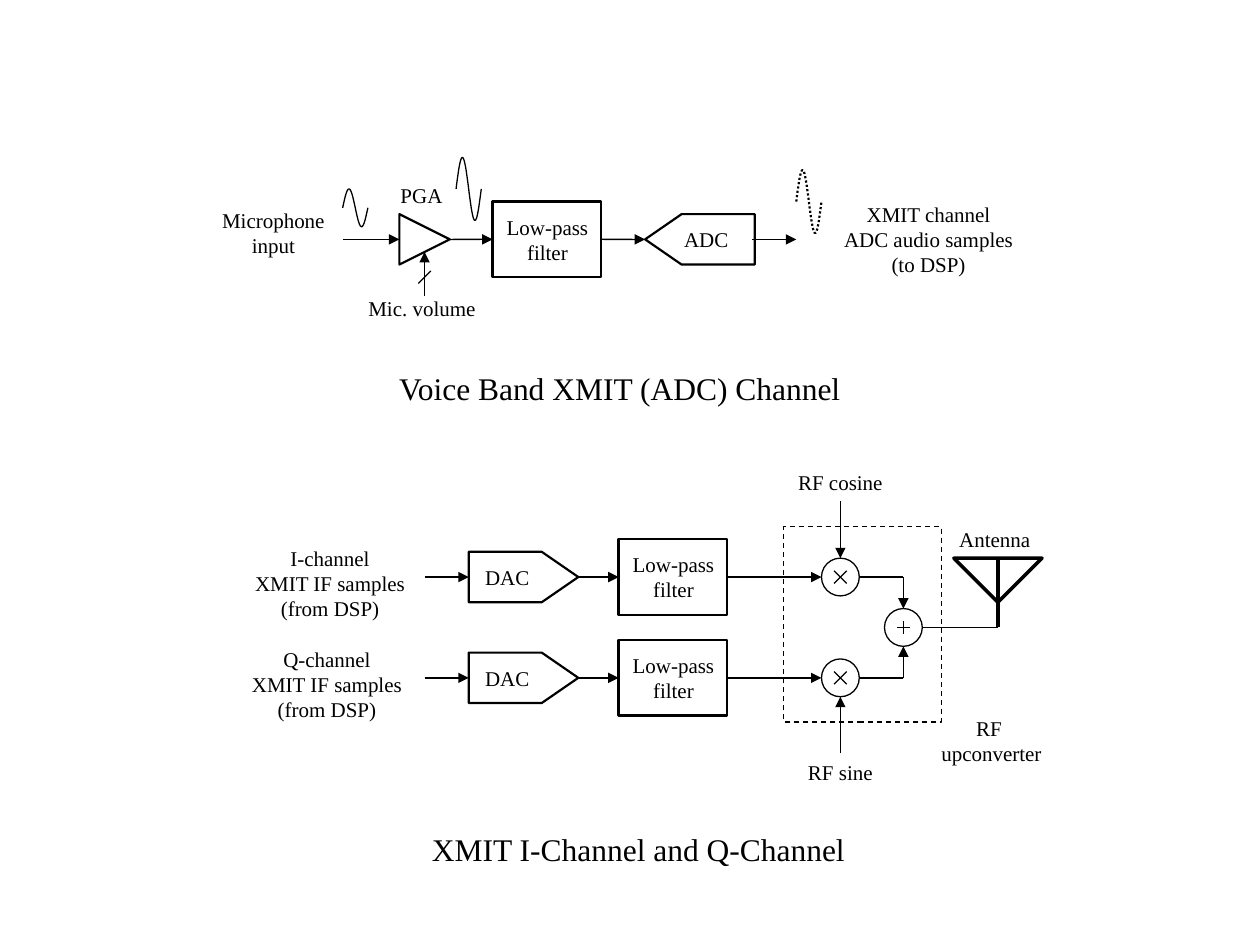
import math

import pptx
import pptx.dml.color
import pptx.enum.dml
import pptx.enum.shapes
import pptx.enum.text
import pptx.oxml
import pptx.oxml.ns
import pptx.util

Inches, Pt = pptx.util.Inches, pptx.util.Pt
SHAPE = pptx.enum.shapes.MSO_SHAPE
DASH = pptx.enum.dml.MSO_LINE
ALIGN = pptx.enum.text.PP_ALIGN

THEME = {
    "ink": pptx.dml.color.RGBColor(0, 0, 0),
    "paper": pptx.dml.color.RGBColor(255, 255, 255),
    "font": "Times New Roman",
    "title": Pt(18), "label": Pt(12),
    "thin": Pt(0.75), "medium": Pt(1.25), "heavy": Pt(2),
}

# Content: text with left, top, width, height in inches
TITLES = [
    ("XMIT I-Channel and Q-Channel", 3.33, 6.54, 3.49, 0.4),
    ("Voice Band XMIT (ADC) Channel", 3.07, 2.88, 3.74, 0.4),
]
LABELS = [
    ("Microphone\ninput", 1.47, 1.6, 1.4, 0.55),
    ("XMIT channel\nADC audio samples\n(to DSP)", 6.47, 1.55, 1.8, 0.9),
    ("Mic. volume ", 2.77, 2.3, 1.2, 0.35),
    ("PGA", 2.87, 1.4, 0.95, 0.3),
    ("I-channel\nXMIT IF samples\n(from DSP)", 1.77, 4.28, 1.7, 0.75),
    ("Q-channel\nXMIT IF samples\n(from DSP)", 1.72, 5.08, 1.75, 0.8),
    ("RF cosine", 6.17, 3.68, 1, 0.35),
    ("RF sine", 6.17, 5.98, 1, 0.4),
    ("RF \nupconverter", 7.22, 5.63, 1.3, 0.6),
    ("Antenna", 7.27, 4.13, 1.25, 0.4),
]
# Sine waves: left, middle, amplitude, line width, dash
WAVES = [
    (2.72, 1.65, 0.15, "thin", None),
    (3.62, 1.5, 0.25, "thin", None),
    (6.32, 1.6, 0.25, "medium", DASH.ROUND_DOT),
]
VOICE_Y = 1.9
CHANNEL_YS = (4.58, 5.38)
MIXER_X, ADDER_X, ANTENNA_X = 6.67, 7.17, 7.92
ADDER_Y = sum(CHANNEL_YS) / 2
RADIUS = 0.15
CONVERTER_W, CONVERTER_H, SHOULDER = 0.87, 0.4, 0.58

prs = pptx.Presentation()
prs.slide_width, prs.slide_height = Inches(10), Inches(7.5)
s = prs.slides.add_slide(prs.slide_layouts[6])


def set_all(obj, values):
    for name, value in values.items():
        setattr(obj, name, value)


def outline(sp, weight, dash=None, filled=False):
    sp.line.color.rgb = THEME["ink"]
    set_all(sp.line, {"width": THEME[weight], "dash_style": dash})
    sp.shadow.inherit = False
    if filled:
        sp.fill.solid()
        sp.fill.fore_color.rgb = THEME["paper"]
    else:
        sp.fill.background()
    return sp


def preset(kind, x, y, w, h, weight, dash=None, filled=False):
    sp = s.shapes.add_shape(kind, *map(Inches, (x, y, w, h)))
    return outline(sp, weight, dash, filled)


def freeform(points, weight, dash=None, filled=False, close=True):
    pts = [(Inches(x), Inches(y)) for x, y in points]
    fb = s.shapes.build_freeform(*pts[0])
    fb.add_line_segments(pts[1:], close=close)
    return outline(fb.convert_to_shape(), weight, dash, filled)


def line(x1, y1, x2, y2, arrow=False, weight="thin", begin=None, end=None):
    c = s.shapes.add_connector(pptx.enum.shapes.MSO_CONNECTOR.STRAIGHT,
                               *map(Inches, (x1, y1, x2, y2)))
    if begin:
        c.begin_connect(begin, 3)
    if end:
        c.end_connect(end, 1)
    c.line.color.rgb = THEME["ink"]
    c.line.width = THEME[weight]
    ns = pptx.oxml.ns.nsdecls("a")
    if arrow:
        c.line._get_or_add_ln().append(
            pptx.oxml.parse_xml(f'<a:tailEnd {ns} type="triangle"/>'))
    c._element.spPr.append(pptx.oxml.parse_xml(f"<a:effectLst {ns}/>"))


def text(words, x, y, w, h, size="label", align=ALIGN.CENTER, wrap=True):
    tf = s.shapes.add_textbox(*map(Inches, (x, y, w, h))).text_frame
    tf.word_wrap = wrap
    for i, row in enumerate(words.split("\n")):
        p = tf.paragraphs[0] if i == 0 else tf.add_paragraph()
        p.alignment = align
        r = p.add_run()
        r.text = row
        set_all(r.font, {"name": THEME["font"], "size": THEME[size]})
        r.font.color.rgb = THEME["ink"]


def low_pass(x, y):
    """Filter box centred on height y."""
    box = preset(SHAPE.RECTANGLE, x, y - 0.3, 0.86, 0.6, "medium")
    text("Low-pass\nfilter", x - 0.09, y - 0.25, 1.05, 0.55)
    return box


def converter(name, x, y, point_left, text_x):
    """Five-sided converter whose tip points left or right."""
    outline_x = [0, SHOULDER, CONVERTER_W, SHOULDER, 0]
    if point_left:
        outline_x = [CONVERTER_W - dx for dx in outline_x]
    half = CONVERTER_H / 2
    freeform([(x + dx, y + dy) for dx, dy
              in zip(outline_x, (-half, -half, 0, half, half))], "medium", filled=True)
    text(name, text_x, y - 0.15, 0.81, 0.3)


def circle(x, y):
    preset(SHAPE.OVAL, x - RADIUS, y - RADIUS, 2 * RADIUS, 2 * RADIUS, "thin")


# Titles and labels
for title in TITLES:
    text(*title, size="title", align=ALIGN.LEFT, wrap=False)
for label in LABELS:
    text(*label)

# Voice band: amplifier, filter, converter
freeform([(3.17, VOICE_Y - 0.2), (3.57, VOICE_Y), (3.17, VOICE_Y + 0.2)], "medium")
voice_filter = low_pass(3.91, VOICE_Y)
converter("ADC", 5.12, VOICE_Y, True, 5.2)
line(2.72, VOICE_Y, 3.17, VOICE_Y, True)
line(3.57, VOICE_Y, 3.91, VOICE_Y, True, end=voice_filter)
line(4.77, VOICE_Y, 5.12, VOICE_Y, True, begin=voice_filter)
line(5.97, VOICE_Y, 6.32, VOICE_Y, True)
line(3.37, 2.35, 3.37, 2, True)
line(3.42, 2.15, 3.32, 2.25)

# One sine period each
STEPS = 40
for left, mid, amp, weight, dash in WAVES:
    freeform([(left + 0.2 * i / STEPS, mid - amp * math.sin(2 * math.pi * i / STEPS))
              for i in range(STEPS + 1)], weight, dash, close=False)

# I and Q channels: converter, filter, mixer, path to the adder
for y, side in zip(CHANNEL_YS, (-1, 1)):
    converter("DAC", 3.72, y, False, 3.62)
    channel_filter = low_pass(4.91, y)
    line(3.37, y, 3.72, y, True)
    line(4.58, y, 4.91, y, True, end=channel_filter)
    line(5.77, y, MIXER_X - RADIUS, y, True, begin=channel_filter)
    circle(MIXER_X, y)
    for d in (-0.05, 0.05):
        line(MIXER_X - 0.05, y + d, MIXER_X + 0.05, y - d)
    outer_y = ADDER_Y + side
    line(MIXER_X, outer_y, MIXER_X, y + side * RADIUS, True)
    line(ADDER_X, y, MIXER_X + RADIUS, y)
    line(ADDER_X, y, ADDER_X, ADDER_Y + side * RADIUS, True)

# Adder and antenna
circle(ADDER_X, ADDER_Y)
line(ADDER_X, ADDER_Y - 0.05, ADDER_X, ADDER_Y + 0.05)
line(ADDER_X - 0.05, ADDER_Y, ADDER_X + 0.05, ADDER_Y)
antenna = preset(SHAPE.ISOSCELES_TRIANGLE, 7.57, 4.43, 0.7, 0.35, "heavy", filled=True)
antenna.rotation = 180
line(ANTENNA_X, 4.43, ANTENNA_X, ADDER_Y, weight="heavy")
line(ANTENNA_X, ADDER_Y, ADDER_X + RADIUS, ADDER_Y)

# Upconverter boundary
preset(SHAPE.RECTANGLE, 6.22, 4.18, 1.25, 1.55, "thin", DASH.DASH)

prs.save("out.pptx")
